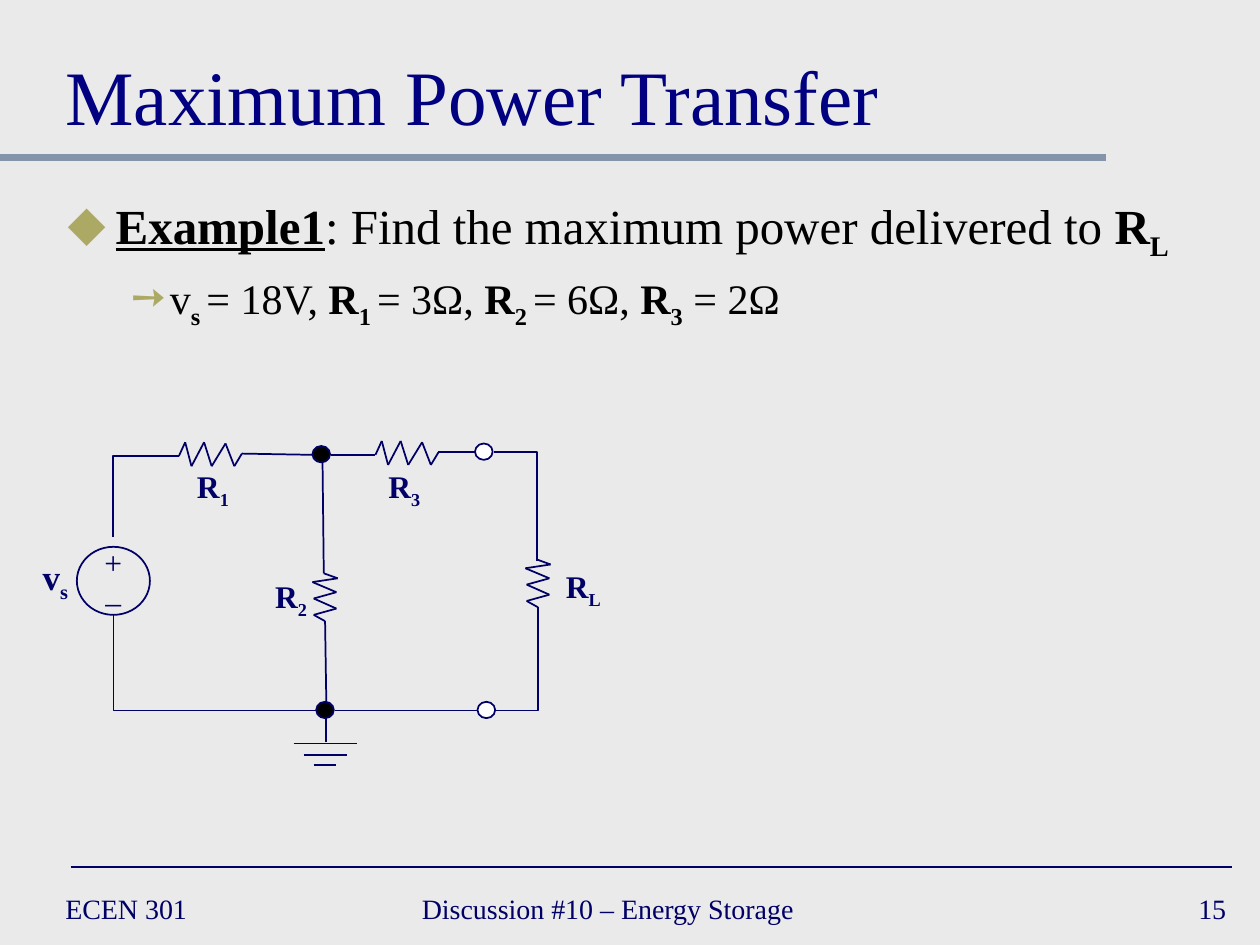
import itertools

import lxml.etree
import pptx
import pptx.dml.color
import pptx.enum.shapes
import pptx.enum.text
import pptx.oxml.ns
import pptx.util

Inches = pptx.util.Inches
Pt = pptx.util.Pt
RGBColor = pptx.dml.color.RGBColor
ALIGN = pptx.enum.text.PP_ALIGN
ANCHOR = pptx.enum.text.MSO_ANCHOR
CONNECTOR = pptx.enum.shapes.MSO_CONNECTOR
qn = pptx.oxml.ns.qn

FONT = "Times New Roman"
BACKGROUND = RGBColor(0xEA, 0xEA, 0xEA)
NAVY = RGBColor(0x00, 0x00, 0x66)
TITLE_BLUE = RGBColor(0x00, 0x00, 0x80)
RULE_GRAY = RGBColor(0x84, 0x95, 0xA9)
BULLET_GREEN = RGBColor(0xAC, 0xA9, 0x64)
BLACK = RGBColor(0x00, 0x00, 0x00)
WHITE = RGBColor(0xFF, 0xFF, 0xFF)

ZIGZAG_ACROSS = [(0, 0), (0.05, -0.11), (0.1, 0.08), (0.2, -0.11),
                 (0.26, 0.08), (0.37, -0.1), (0.44, 0.08), (0.5, -0.02)]
ZIGZAG_DOWN = [(0, 0), (0.11, 0.04), (-0.09, 0.07), (0.1, 0.15),
               (-0.08, 0.2), (0.1, 0.28), (-0.08, 0.33), (0.01, 0.38)]


def add_run(paragraph, text, size=18, color=NAVY, bold=False, underline=False, subscript=False):
    """Append a formatted run to a paragraph."""
    run = paragraph.add_run()
    run.text = text
    font = run.font
    font.name, font.size, font.bold, font.underline = FONT, Pt(size), bold, underline
    font.color.rgb = color
    if subscript:
        font._element.set("baseline", "-25000")


def add_text_box(slide, left, top, width, height, wrap=False, anchor=ANCHOR.TOP):
    """Add an empty text box and return its text frame."""
    frame = slide.shapes.add_textbox(
        Inches(left), Inches(top), Inches(width), Inches(height)).text_frame
    frame.word_wrap = wrap
    frame.vertical_anchor = anchor
    return frame


def add_line(slide, start, end, color=NAVY, width=1, kind=CONNECTOR.STRAIGHT):
    """Add a connector without shadow between two points."""
    connector = slide.shapes.add_connector(
        kind, *(Inches(value) for value in (*start, *end)))
    connector.line.color.rgb = color
    connector.line.width = Pt(width)
    lxml.etree.SubElement(connector._element.spPr, qn("a:effectLst"))
    return connector


def add_corner(slide, start, end):
    """Add a wire that runs horizontally, then vertically."""
    connector = add_line(slide, start, end, kind=CONNECTOR.ELBOW)
    connector._element.spPr.find(qn("a:prstGeom")).set("prst", "bentConnector2")


def add_resistor(slide, left, top, zigzag):
    """Draw a resistor as a chain of short lines."""
    points = [(left + x, top + y) for x, y in zigzag]
    for start, end in itertools.pairwise(points):
        add_line(slide, start, end)


def add_circle(slide, left, top, width=0.14, height=0.13, fill=None):
    """Add an outlined ellipse, hollow unless a fill is given."""
    shape = slide.shapes.add_shape(
        pptx.enum.shapes.MSO_SHAPE.OVAL,
        Inches(left), Inches(top), Inches(width), Inches(height))
    shape.shadow.inherit = False
    shape.line.color.rgb = NAVY
    shape.line.width = Pt(1)
    if fill is None:
        shape.fill.background()
    else:
        shape.fill.solid()
        shape.fill.fore_color.rgb = fill


def add_label(slide, left, top, letter, index, size=18):
    """Add a bold component name with a subscript."""
    paragraph = add_text_box(slide, left, top, 0.5, 0.4).paragraphs[0]
    paragraph.alignment = ALIGN.CENTER
    add_run(paragraph, letter, size=size, bold=True)
    add_run(paragraph, index, size=size, bold=True, subscript=True)


def set_bullet(paragraph, character, margin, indent):
    """Give a paragraph a coloured bullet and a hanging indent."""
    properties = paragraph._p.get_or_add_pPr()
    properties.set("marL", str(Inches(margin)))
    properties.set("indent", str(Inches(indent)))
    color = lxml.etree.SubElement(properties, qn("a:buClr"))
    lxml.etree.SubElement(color, qn("a:srgbClr")).set("val", str(BULLET_GREEN))
    lxml.etree.SubElement(properties, qn("a:buChar")).set("char", character)


def add_title(slide):
    """Place and format the title."""
    title = slide.shapes.title
    title.left, title.top = Inches(0.42), Inches(0.17)
    title.width, title.height = Inches(9.17), Inches(1)
    title.text_frame.vertical_anchor = ANCHOR.BOTTOM
    paragraph = title.text_frame.paragraphs[0]
    paragraph.alignment = ALIGN.LEFT
    add_run(paragraph, "Maximum Power Transfer", size=44, color=TITLE_BLUE)


def add_body(slide):
    """Add the problem statement and its given values."""
    frame = add_text_box(slide, 0.44, 1.5, 9.14, 1.21, wrap=True)
    task = frame.paragraphs[0]
    set_bullet(task, "◆", 0.38, -0.38)
    heading = {"size": 28, "color": BLACK}
    add_run(task, "Example1", bold=True, underline=True, **heading)
    add_run(task, ": Find the maximum power delivered to ", **heading)
    add_run(task, "R", bold=True, **heading)
    add_run(task, "L", bold=True, subscript=True, **heading)

    values = frame.add_paragraph()
    values.level = 1
    set_bullet(values, "➙", 0.81, -0.31)
    values.space_before = Pt(6)
    detail = {"size": 24, "color": BLACK}
    for letter, index, value in [("v", "s ", "= 18V, "), ("R", "1 ", "= 3Ω, "),
                                 ("R", "2 ", "= 6Ω, "), ("R", "3", " = 2Ω")]:
        add_run(values, letter, bold=letter == "R", **detail)
        add_run(values, index, bold=True, subscript=True, **detail)
        add_run(values, value, **detail)


def add_footer(slide):
    """Add the course, the lecture and the page number."""
    for text, left, width, alignment in [
            ("ECEN 301", 0.42, 2.17, ALIGN.LEFT),
            ("Discussion #10 – Energy Storage", 3.25, 3.83, ALIGN.LEFT),
            ("15", 7.75, 2.08, ALIGN.RIGHT)]:
        frame = add_text_box(slide, left, 7, width, 0.42, wrap=True, anchor=ANCHOR.MIDDLE)
        frame.paragraphs[0].alignment = alignment
        add_run(frame.paragraphs[0], text, size=16)


def add_source(slide):
    """Draw the voltage source with its polarity signs."""
    add_circle(slide, 0.61, 4.34, 0.58, 0.54)
    frame = add_text_box(slide, 0.73, 4.26, 0.34, 0.7)
    for paragraph, sign in zip((frame.paragraphs[0], frame.add_paragraph()), "+–"):
        paragraph.alignment = ALIGN.CENTER
        add_run(paragraph, sign)
    frame.paragraphs[1].space_before = Pt(1)


def add_circuit(slide):
    """Draw the wires, resistors, nodes, ground and labels."""
    for start, end in [((1.42, 3.62), (0.9, 4.26)), ((2.51, 5.64), (0.9, 4.88)),
                       ((3.92, 3.59), (4.26, 4.45)), ((3.94, 5.64), (4.27, 4.82))]:
        add_corner(slide, start, end)
    for start, end in [((1.92, 3.6), (2.48, 3.61)), ((2.63, 3.61), (2.98, 3.61)),
                       ((3.48, 3.59), (3.77, 3.59)), ((2.56, 3.67), (2.57, 4.55)),
                       ((2.58, 4.93), (2.59, 5.57)), ((2.66, 5.64), (3.79, 5.64)),
                       ((2.59, 5.64), (2.59, 5.89))]:
        add_line(slide, start, end)
    for left, right, height in [(2.33, 2.83, 5.9), (2.41, 2.75, 5.99), (2.49, 2.67, 6.07)]:
        add_line(slide, (left, height), (right, height))
    for left, top, zigzag in [(1.42, 3.62, ZIGZAG_ACROSS), (2.98, 3.61, ZIGZAG_ACROSS),
                              (2.57, 4.55, ZIGZAG_DOWN), (4.26, 4.44, ZIGZAG_DOWN)]:
        add_resistor(slide, left, top, zigzag)
    for left, top, fill in [(2.48, 3.54, BLACK), (2.51, 5.57, BLACK),
                            (3.77, 3.52, WHITE), (3.79, 5.57, WHITE)]:
        add_circle(slide, left, top, fill=fill)
    add_source(slide)
    for left, top, letter, index in [(1.44, 3.66, "R", "1"), (2.06, 4.53, "R", "2"),
                                     (2.96, 3.66, "R", "3"), (4.38, 4.45, "R", "L")]:
        add_label(slide, left, top, letter, index)
    add_label(slide, 0.19, 4.36, "v", "s", size=20)


def main():
    """Build the slide and save the presentation."""
    presentation = pptx.Presentation()
    presentation.slide_width, presentation.slide_height = Inches(10), Inches(7.5)
    slide = presentation.slides.add_slide(presentation.slide_layouts[5])
    slide.background.fill.solid()
    slide.background.fill.fore_color.rgb = BACKGROUND
    add_line(slide, (0, 1.25), (8.78, 1.25), color=RULE_GRAY, width=4)
    add_line(slide, (0.56, 6.88), (9.78, 6.88))
    add_title(slide)
    add_body(slide)
    add_footer(slide)
    add_circuit(slide)
    presentation.save("out.pptx")


if __name__ == "__main__":
    main()
